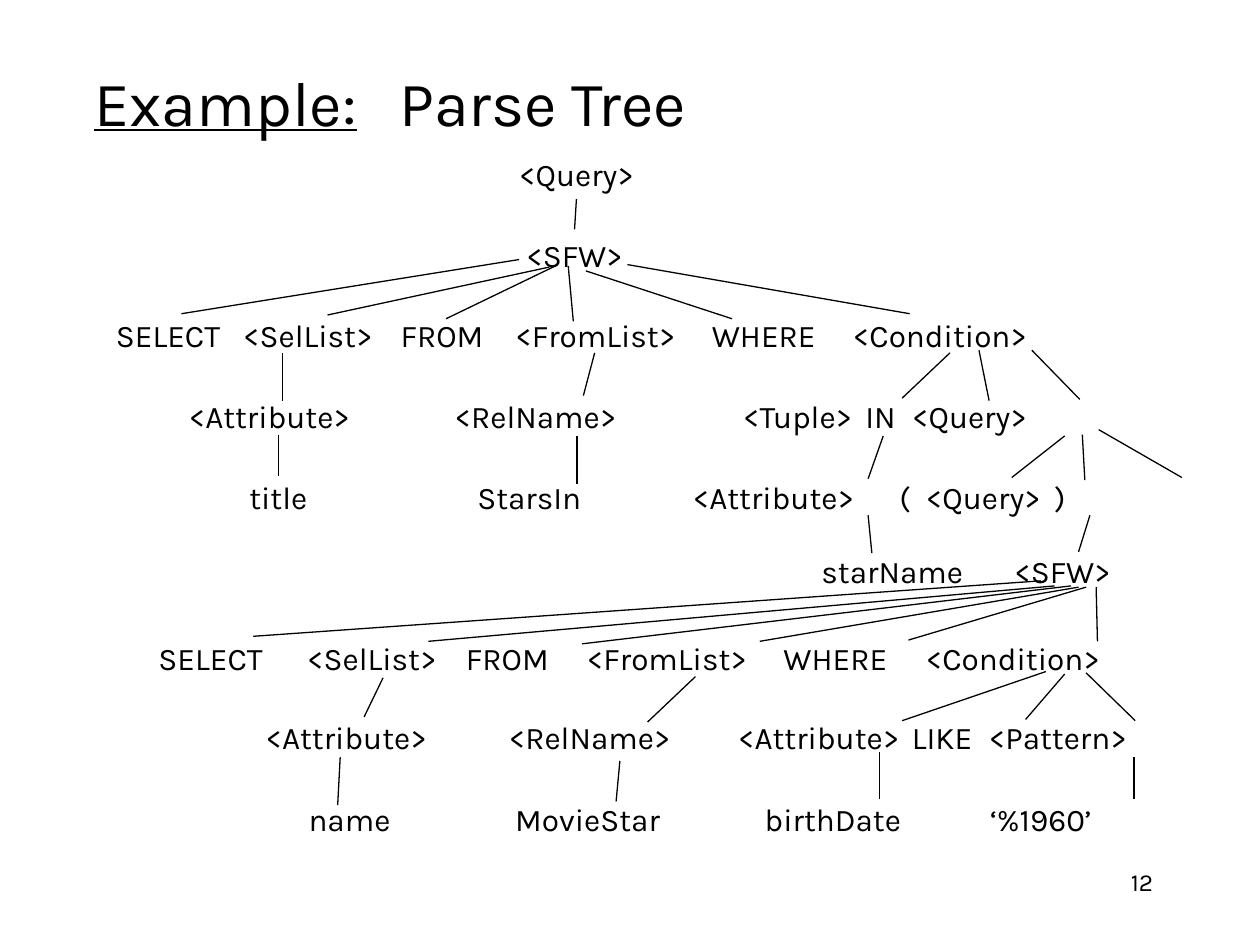
"""Build the parse tree example slide."""
from dataclasses import dataclass

from lxml.etree import SubElement
from pptx import Presentation
from pptx.dml.color import RGBColor
from pptx.enum.shapes import MSO_CONNECTOR as Connector
from pptx.enum.text import MSO_ANCHOR as Anchor, PP_ALIGN as Align
from pptx.oxml.ns import qn
from pptx.util import Inches, Pt


@dataclass(frozen=True)
class Theme:
    """Colours, font and sizes of the slide."""
    ink: RGBColor = RGBColor(0, 0, 0)
    paper: RGBColor = RGBColor(255, 255, 255)
    font: str = "Karla"
    title: int = 36
    node: int = 18
    number: int = 14
    branch: float = 0.75


THEME = Theme()
INSET = 0.1
ROW_HEIGHT = 0.4

ROOT = (3.96, 1.18, 1.23, [("<Query>", 4.06)])
ROOT_SFW = (4.03, 1.82, 1.06, [("<SFW>", 4.13)])
LEVELS = [
    (0.58, 2.46, 7.94, [("SELECT", 0.92), ("<SelList>", 1.93), ("FROM", 3.18),
                        ("<FromList>", 4.09), ("WHERE", 5.65), ("<Condition>", 6.77)]),
    (1.4, 3.1, 7.87, [("<Attribute>", 1.5), ("<RelName>", 3.61), ("<Tuple>", 5.9),
                      ("IN", 6.87), ("<Query>", 7.24)]),
    (1.88, 3.74, 7.69, [("title", 1.98), ("StarsIn", 3.79), ("<Attribute>", 5.5),
                        ("(", 7.14), ("<Query>", 7.35), (")", 8.37)]),
    (6.42, 4.33, 2.66, [("starName", 6.52), ("<SFW>", 8.05)]),
    (1.16, 5.02, 8.26, [("SELECT", 1.26), ("<SelList>", 2.44), ("FROM", 3.7),
                        ("<FromList>", 4.66), ("WHERE", 6.22), ("<Condition>", 7.35)]),
    (2.01, 5.65, 7.74, [("<Attribute>", 2.11), ("<RelName>", 4.04), ("<Attribute>", 5.86),
                        ("LIKE", 7.24), ("<Pattern>", 7.85)]),
    (2.35, 6.3, 7.18, [("name", 2.45), ("MovieStar", 4.09), ("birthDate", 6.07),
                       ("‘%1960’", 7.86)]),
]

BRANCHES = [
    (4.12, 2.06, 1.44, 2.49), (4.36, 2.12, 2.6, 2.5), (4.41, 2.11, 3.54, 2.53),
    (4.51, 2.11, 4.55, 2.55), (4.65, 2.15, 5.81, 2.53), (4.98, 2.1, 7.22, 2.49),
    (2.24, 2.8, 2.24, 3.18), (4.72, 2.8, 4.63, 3.14), (7.54, 2.8, 7.16, 3.16),
    (7.77, 2.78, 7.85, 3.18), (8.19, 2.78, 8.57, 3.17),
    (2.21, 3.45, 2.21, 3.78), (4.58, 3.46, 4.58, 3.84), (7.01, 3.46, 6.89, 3.8),
    (8.45, 3.46, 8.03, 3.79), (8.59, 3.45, 8.61, 3.81), (8.72, 3.41, 9.38, 3.79),
    (6.89, 4.09, 6.92, 4.39), (8.65, 4.09, 8.56, 4.38),
    (8.26, 4.61, 2.01, 5.05), (8.37, 4.65, 3.4, 5.09), (8.5, 4.65, 4.62, 5.11),
    (8.56, 4.66, 6.03, 5.09), (8.62, 4.66, 7.21, 5.08), (8.7, 4.66, 8.71, 5.09),
    (3.04, 5.38, 2.89, 5.69), (5.52, 5.37, 5.14, 5.73), (8.3, 5.33, 7.16, 5.72),
    (8.45, 5.35, 8.14, 5.71), (8.62, 5.34, 9.01, 5.72),
    (2.7, 6.01, 2.68, 6.39), (4.92, 6.04, 4.89, 6.36), (6.98, 5.97, 6.98, 6.34),
    (9, 6.01, 9, 6.34),
]


def add_text(slide, place, size, align=Align.LEFT, anchor=Anchor.MIDDLE):
    """Add an empty styled text box and return it."""
    box = slide.shapes.add_textbox(*map(Inches, place))
    frame = box.text_frame
    frame.word_wrap = True
    frame.vertical_anchor = anchor
    paragraph = frame.paragraphs[0]
    paragraph.alignment = align
    font = paragraph.font
    font.name, font.size = THEME.font, Pt(size)
    font.color.rgb = THEME.ink
    return box


def set_tabs(paragraph, stops):
    """Give the paragraph left tab stops, in inches from its start."""
    properties = paragraph._p.get_or_add_pPr()
    tabs = SubElement(properties, qn("a:tabLst"))
    properties.find(qn("a:defRPr")).addprevious(tabs)
    for stop in stops:
        SubElement(tabs, qn("a:tab"), pos=str(Inches(stop)), algn="l")


def add_title(slide):
    """Add the title with its underlined lead word."""
    paragraph = add_text(slide, (0.65, 0.39, 8.5, 0.82), THEME.title).text_frame.paragraphs[0]
    set_tabs(paragraph, [2.42])
    lead = paragraph.add_run()
    lead.text = "Example:"
    lead.font.underline = True
    paragraph.add_run().text = "\tParse Tree"


def add_level(slide, left, top, width, nodes):
    """Add one tree level with each node at its own start."""
    align = Align.CENTER if len(nodes) == 1 else Align.LEFT
    level = add_text(slide, (left, top, width, ROW_HEIGHT), THEME.node, align)
    names, starts = zip(*nodes)
    frame = level.text_frame
    frame.margin_left = Inches(starts[0] - left)
    frame.margin_right = Inches(INSET)
    paragraph = frame.paragraphs[0]
    if len(nodes) > 1:
        set_tabs(paragraph, [start - starts[0] for start in starts[1:]])
    paragraph.add_run().text = "\t".join(names)
    return level


def add_branch(slide, x1, y1, x2, y2):
    """Add a thin line between two tree nodes."""
    branch = slide.shapes.add_connector(Connector.STRAIGHT, *map(Inches, (x1, y1, x2, y2)))
    branch.line.color.rgb = THEME.ink
    branch.line.width = Pt(THEME.branch)
    SubElement(branch._element.spPr, qn("a:effectLst"))
    return branch


def add_page_number(slide):
    """Add the page number at the lower right."""
    number = add_text(slide, (7.17, 6.83, 2.08, 0.5), THEME.number, Align.RIGHT, Anchor.TOP)
    number.text_frame.paragraphs[0].add_run().text = "12"


def main():
    """Build and save the slide."""
    deck = Presentation()
    deck.slide_width, deck.slide_height = Inches(10), Inches(7.5)
    slide = deck.slides.add_slide(deck.slide_layouts[6])
    background = slide.background.fill
    background.solid()
    background.fore_color.rgb = THEME.paper
    add_page_number(slide)
    add_title(slide)
    query = add_level(slide, *ROOT)
    sfw = add_level(slide, *ROOT_SFW)
    for level in LEVELS:
        add_level(slide, *level)
    trunk = add_branch(slide, 4.53, 1.57, 4.53, 1.82)
    trunk.begin_connect(query, 2)
    trunk.end_connect(sfw, 0)
    for branch in BRANCHES:
        add_branch(slide, *branch)
    deck.save("out.pptx")


if __name__ == "__main__":
    main()
